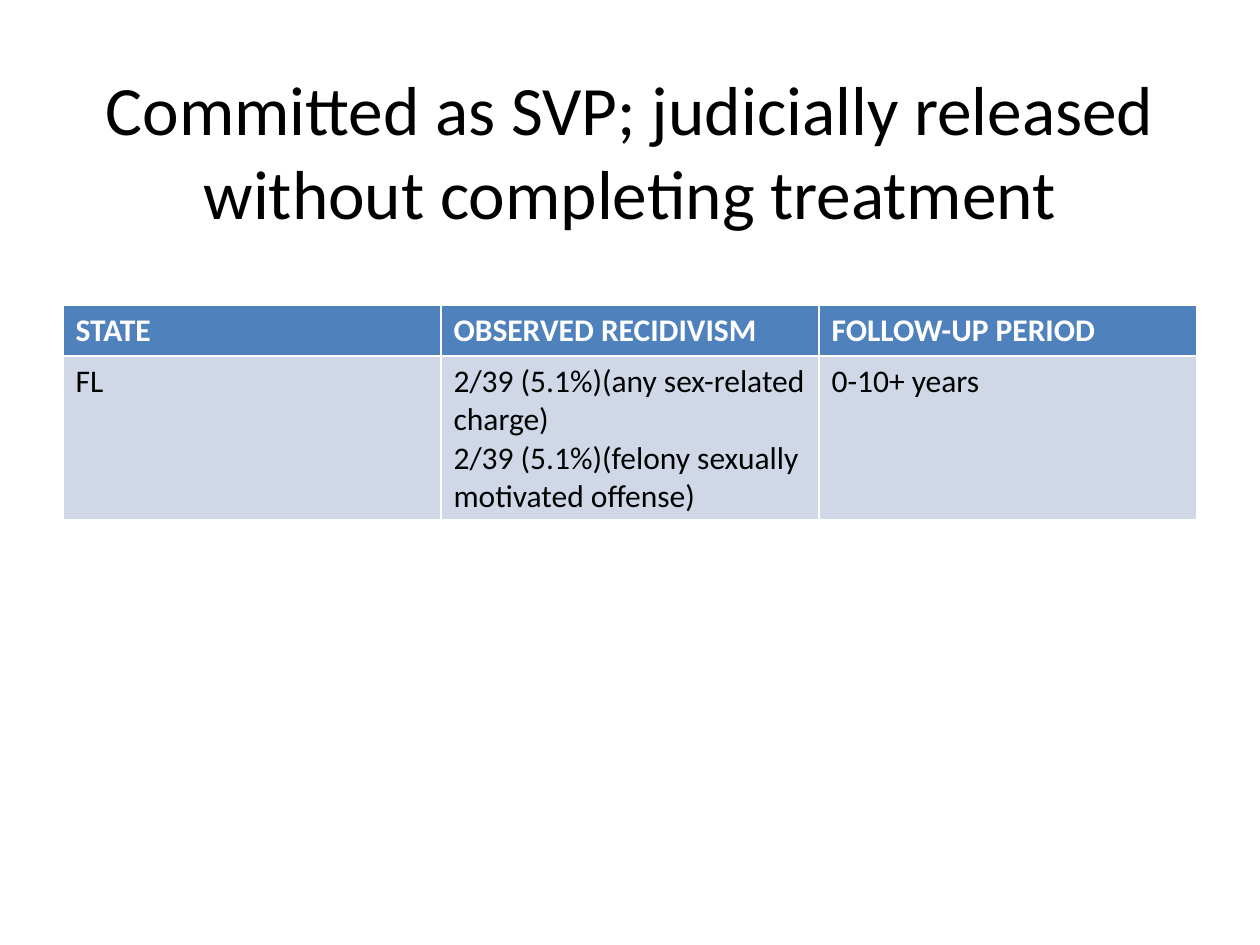
from pptx import Presentation
from pptx.dml.color import RGBColor
from pptx.enum.text import MSO_ANCHOR, PP_ALIGN
from pptx.util import Cm, Pt

FONT = "Calibri"
BLACK = RGBColor(0x00, 0x00, 0x00)
WHITE = RGBColor(0xFF, 0xFF, 0xFF)
BLUE = RGBColor(0x4F, 0x81, 0xBD)
PALE_BLUE = RGBColor(0xD0, 0xD8, 0xE8)

TITLE = "Committed as SVP; judicially released without completing treatment"
ROWS = [
    ["STATE", "OBSERVED RECIDIVISM", "FOLLOW-UP PERIOD"],
    [
        "FL",
        "2/39 (5.1%)(any sex-related charge)\n"
        "2/39 (5.1%)(felony sexually motivated offense)",
        "0-10+ years",
    ],
]
ROW_HEIGHTS = [Cm(1.03), Cm(3.3)]


def format_runs(tf, size, color, bold=False):
    for p in tf.paragraphs:
        for r in p.runs:
            r.font.name = FONT
            r.font.size = Pt(size)
            r.font.bold = bold
            r.font.color.rgb = color


def add_title(slide, left, top, width, height):
    tf = slide.shapes.add_textbox(left, top, width, height).text_frame
    tf.word_wrap = True
    tf.vertical_anchor = MSO_ANCHOR.MIDDLE
    tf.text = TITLE
    tf.paragraphs[0].alignment = PP_ALIGN.CENTER
    format_runs(tf, 39.6, BLACK)


def add_recidivism_table(slide, left, top, width):
    """Place the table; its white borders come from the default table style."""
    table = slide.shapes.add_table(
        len(ROWS), len(ROWS[0]), left, top, width, sum(ROW_HEIGHTS)
    ).table
    for i, (texts, height) in enumerate(zip(ROWS, ROW_HEIGHTS)):
        is_header = i == 0
        table.rows[i].height = height
        for j, text in enumerate(texts):
            cell = table.cell(i, j)
            cell.text = text
            cell.fill.solid()
            cell.fill.fore_color.rgb = BLUE if is_header else PALE_BLUE
            format_runs(cell.text_frame, 18, WHITE if is_header else BLACK, is_header)


def main():
    prs = Presentation()
    prs.slide_width, prs.slide_height = Cm(25.4), Cm(19.05)
    slide = prs.slides.add_slide(prs.slide_layouts[6])
    margin = Cm(1.27)
    width = prs.slide_width - 2 * margin
    add_title(slide, margin, Cm(0.76), width, Cm(4.52))
    add_recidivism_table(slide, margin, Cm(6.15), width)
    prs.save("out.pptx")


if __name__ == "__main__":
    main()
